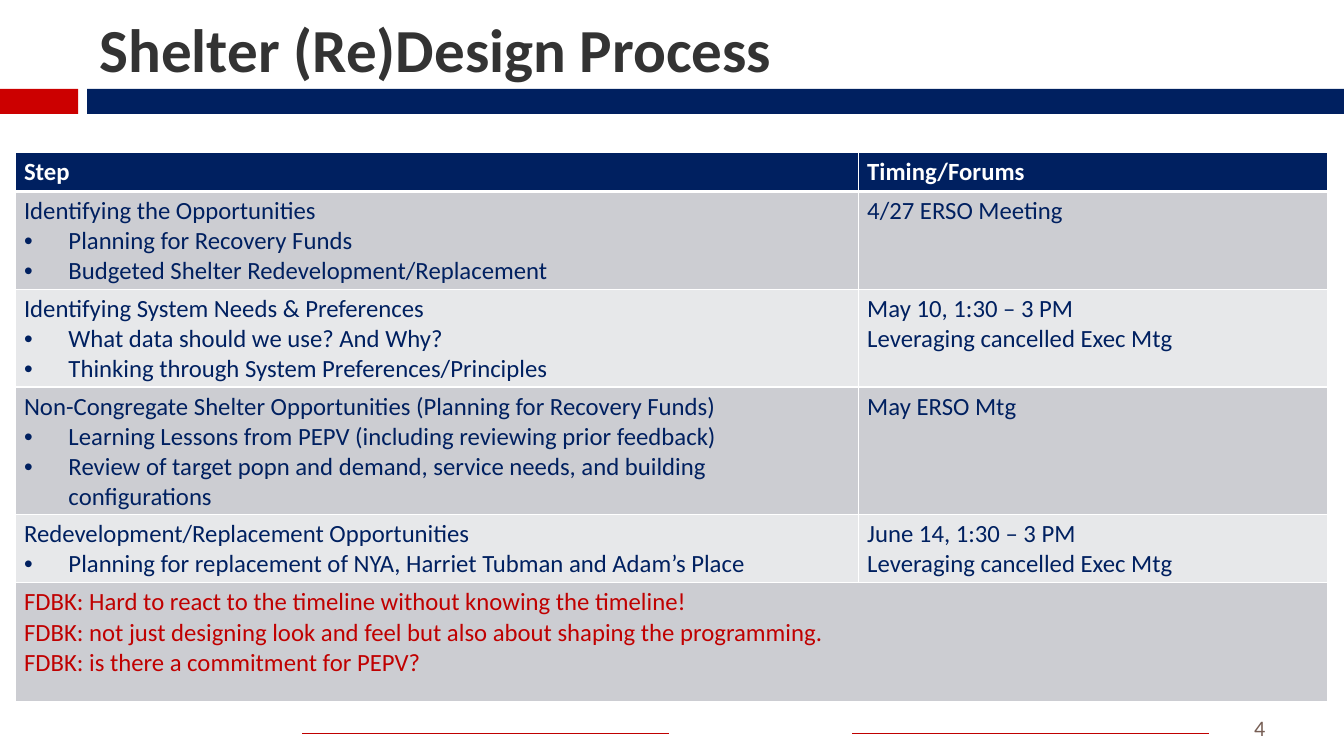
from lxml import etree
from pptx import Presentation
from pptx.dml.color import RGBColor
from pptx.enum.shapes import MSO_CONNECTOR, MSO_SHAPE
from pptx.enum.text import MSO_ANCHOR
from pptx.oxml.ns import qn
from pptx.util import Pt

PX = 9144
RECTANGLE = MSO_SHAPE.RECTANGLE
STRAIGHT = MSO_CONNECTOR.STRAIGHT
BOTTOM = MSO_ANCHOR.BOTTOM
COLORS = {
    "red": "CC0000",
    "navy": "002060",
    "crimson": "C00000",
    "charcoal": "333333",
    "brown": "775F55",
    "white": "FFFFFF",
    "dark_band": "CCCDD2",
    "light_band": "E7E8EA",
}


def rgb(name):
    return RGBColor.from_string(COLORS[name])


def write(paragraph, text, size, color, bold=False):
    run = paragraph.add_run()
    run.text = text
    font_format = {"name": "Calibri", "size": Pt(size), "bold": bold}
    for attribute, value in font_format.items():
        setattr(run.font, attribute, value)
    run.font.color.rgb = rgb(color)


prs = Presentation()
prs.slide_width, prs.slide_height = 1511 * PX, 850 * PX
slide = prs.slides.add_slide(prs.slide_layouts[6])

for left, width, color in [(0, 88, "red"), (98, 1413, "navy")]:
    bar = slide.shapes.add_shape(RECTANGLE, left * PX, 100 * PX, width * PX, 28 * PX)
    bar.shadow.inherit = False
    bar.fill.solid()
    bar.fill.fore_color.rgb = rgb(color)
    bar.line.fill.background()

for start, end in [(752, 340), (1359, 958)]:
    rule = slide.shapes.add_connector(STRAIGHT, start * PX, 825 * PX, end * PX, 825 * PX)
    rule.line.color.rgb = rgb("crimson")
    rule.line.width = Pt(0.75)
    etree.SubElement(rule._element.spPr, qn("a:effectLst"))

captions = [
    ("Shelter (Re)Design Process", (101, 10, 1229, 91), 49.5, "charcoal", True),
    ("4", (1399, 794, 75, 45), 17.9, "brown", False),
]
for text, bounds, size, color, bold in captions:
    caption = slide.shapes.add_textbox(*[length * PX for length in bounds])
    frame_format = {
        "word_wrap": True,
        "vertical_anchor": BOTTOM,
        "margin_left": 11 * PX,
        "margin_right": 11 * PX,
        "margin_top": 6 * PX,
        "margin_bottom": 6 * PX,
    }
    for attribute, value in frame_format.items():
        setattr(caption.text_frame, attribute, value)
    write(caption.text_frame.paragraphs[0], text, size, color, bold)

steps = [
    (44, ["Step"], ["Timing/Forums"]),
    (92, ["Identifying the Opportunities",
          "• Planning for Recovery Funds",
          "• Budgeted Shelter Redevelopment/Replacement"],
     ["4/27 ERSO Meeting"]),
    (92, ["Identifying System Needs & Preferences",
          "• What data should we use? And Why?",
          "• Thinking through System Preferences/Principles"],
     ["May 10, 1:30 – 3 PM", "Leveraging cancelled Exec Mtg"]),
    (92, ["Non-Congregate Shelter Opportunities (Planning for Recovery Funds)",
          "• Learning Lessons from PEPV (including reviewing prior feedback)",
          "• Review of target popn and demand, service needs, and building configurations"],
     ["May ERSO Mtg"]),
    (68, ["Redevelopment/Replacement Opportunities",
          "• Planning for replacement of NYA, Harriet Tubman and Adam’s Place"],
     ["June 14, 1:30 – 3 PM", "Leveraging cancelled Exec Mtg"]),
    (133, ["FDBK: Hard to react to the timeline without knowing the timeline!",
           "FDBK: not just designing look and feel but also about shaping the programming.",
           "FDBK: is there a commitment for PEPV?"],
     []),
]
last = len(steps) - 1
schedule = slide.shapes.add_table(
    len(steps), 2, 17 * PX, 171 * PX, 1476 * PX, sum(step[0] for step in steps) * PX
).table
schedule.first_row = False
schedule.horz_banding = False
for column, width in zip(schedule.columns, (948, 528)):
    column.width = width * PX
schedule.cell(last, 0).merge(schedule.cell(last, 1))

for row, (height, *contents) in enumerate(steps):
    schedule.rows[row].height = height * PX
    band = "navy" if row == 0 else "dark_band" if row % 2 else "light_band"
    text_color = "white" if row == 0 else "crimson" if row == last else "navy"
    for column, lines in enumerate(contents):
        cell = schedule.cell(row, column)
        cell.fill.solid()
        cell.fill.fore_color.rgb = rgb(band)
        borders = {"L": 1, "R": 1, "T": 3 if row == 1 else 1, "B": 3 if row == 0 else 1}
        for position, (side, weight) in enumerate(borders.items()):
            border = etree.Element(qn(f"a:ln{side}"), w=str(Pt(weight)))
            paint = etree.SubElement(border, qn("a:solidFill"))
            etree.SubElement(paint, qn("a:srgbClr"), val=COLORS["white"])
            cell._tc.get_or_add_tcPr().insert(position, border)
        for index, line in enumerate(lines):
            frame = cell.text_frame
            paragraph = frame.add_paragraph() if index else frame.paragraphs[0]
            if line.startswith("• "):
                properties = paragraph._p.get_or_add_pPr()
                properties.set("marL", str(50 * PX))
                properties.set("indent", str(-50 * PX))
                etree.SubElement(properties, qn("a:buFont"), typeface="Arial")
                etree.SubElement(properties, qn("a:buChar"), char="•")
            write(paragraph, line.removeprefix("• "), 20, text_color, row == 0)

prs.save("out.pptx")
